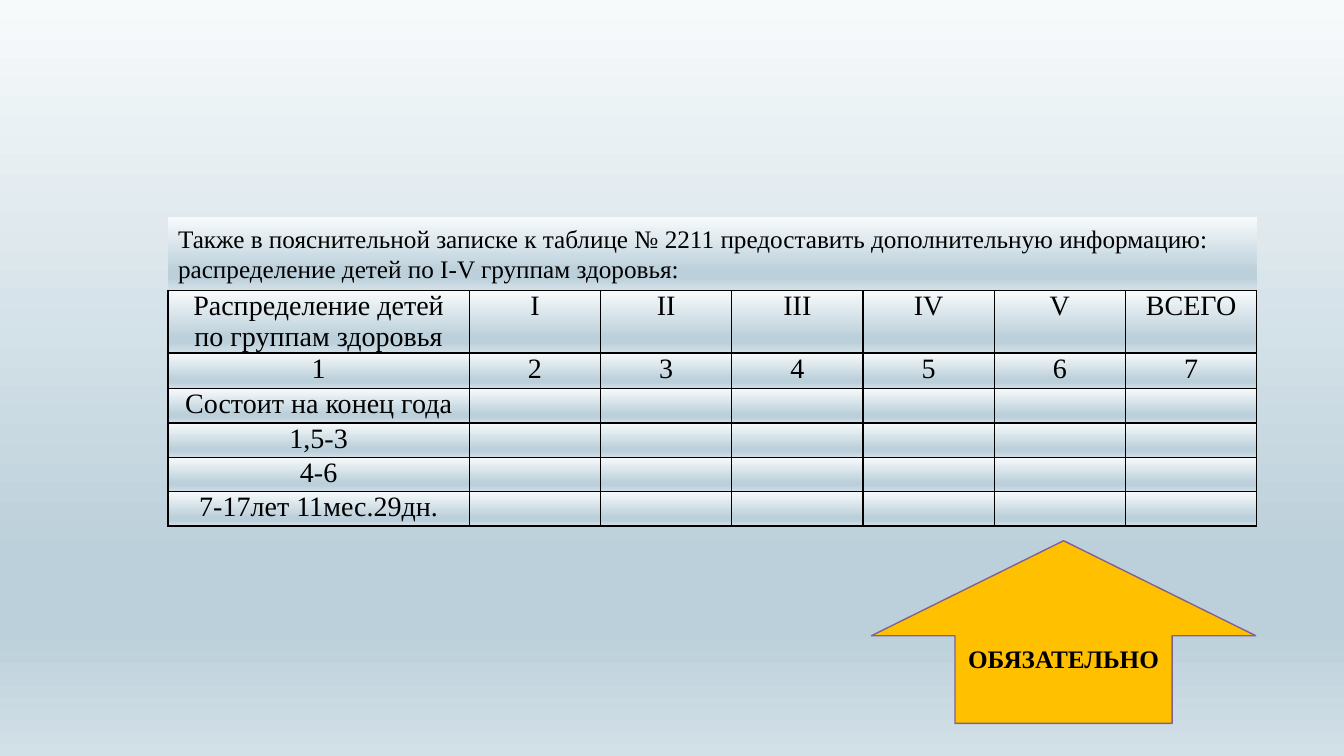
from lxml.etree import SubElement
from pptx import Presentation
from pptx.dml.color import RGBColor
from pptx.enum.shapes import MSO_SHAPE
from pptx.enum.text import MSO_ANCHOR, MSO_AUTO_SIZE, PP_ALIGN
from pptx.oxml.ns import qn
from pptx.util import Pt

PX = 9525
FONT = "Times New Roman"
STOPS = [(0, "F7FAFB"), (74, "BCD0DB"), (83, "BCD0DB"), (100, "D2E0E7")]
LEFT, WIDTH = 160, 1037
GROUPS = ["I", "II", "III", "IV", "V", "ВСЕГО"]
AGES = ["Состоит на конец года", "1,5-3", "4-6", "7-17лет 11мес.29дн."]
ROWS = [
    ["Распределение детей по группам здоровья", *GROUPS],
    [str(n) for n in range(1, 8)],
    *[[age] + [""] * len(GROUPS) for age in AGES],
]
COL_WIDTHS = [287] + [125] * len(GROUPS)
ROW_HEIGHTS = [59, 34] + [29] * len(AGES)
NOTE = ("Также в пояснительной записке к таблице № 2211 предоставить дополнительную "
        "информацию: распределение детей по I-V группам здоровья:")


def px(*values):
    return [v * PX for v in values]


def color(value):
    return RGBColor.from_string(value)


def set_attrs(obj, attrs):
    for name, value in attrs.items():
        setattr(obj, name, value)


def set_gradient(fill, element):
    fill.gradient()
    fill.gradient_angle = 270
    gs_lst = element.find(".//" + qn("a:gsLst"))
    for gs in list(gs_lst):
        gs_lst.remove(gs)
    for pos, value in STOPS:
        gs = SubElement(gs_lst, qn("a:gs"), pos=str(pos * 1000))
        SubElement(gs, qn("a:srgbClr"), val=value)


def write_text(tf, text, align, size, bold=False):
    p = tf.paragraphs[0]
    set_attrs(p, {"alignment": align, "space_before": Pt(0), "line_spacing": 1.0})
    if not text:
        SubElement(p._p, qn("a:endParaRPr"), sz=str(size * 100))
        return
    r = p.add_run()
    r.text = text
    set_attrs(r.font, {"name": FONT, "size": Pt(size), "bold": bold})
    r.font.color.rgb = color("000000")


def add_borders(cell):
    tc_pr = cell._tc.get_or_add_tcPr()
    for side in ("lnL", "lnR", "lnT", "lnB"):
        ln = SubElement(tc_pr, qn("a:" + side), w=str(Pt(1)))
        fill = SubElement(ln, qn("a:solidFill"))
        SubElement(fill, qn("a:srgbClr"), val="000000")


def add_health_table(s):
    frame = s.shapes.add_table(len(ROWS), len(COL_WIDTHS),
                               *px(LEFT, 277, WIDTH, sum(ROW_HEIGHTS)))
    table = frame.table
    set_attrs(table, {"first_row": False, "horz_banding": False})
    for col, width in zip(table.columns, COL_WIDTHS):
        col.width = width * PX
    for row, height, texts in zip(table.rows, ROW_HEIGHTS, ROWS):
        row.height = height * PX
        for cell, text in zip(row.cells, texts):
            set_attrs(cell, {"margin_left": 7 * PX, "margin_right": 7 * PX,
                             "margin_top": 0, "margin_bottom": 0})
            add_borders(cell)
            set_gradient(cell.fill, cell._tc)
            write_text(cell.text_frame, text, PP_ALIGN.CENTER, 20)


def fill_note(sp):
    left, top, width, height = px(LEFT, 207, WIDTH, 69)
    set_attrs(sp, {"left": left, "top": top, "width": width, "height": height})
    set_gradient(sp.fill, sp._element)
    set_attrs(sp.text_frame, {"word_wrap": True, "auto_size": MSO_AUTO_SIZE.NONE,
                              "vertical_anchor": MSO_ANCHOR.MIDDLE})
    write_text(sp.text_frame, NOTE, PP_ALIGN.LEFT, 18)


def add_arrow(s):
    sp = s.shapes.add_shape(MSO_SHAPE.UP_ARROW, *px(830, 515, 366, 174))
    sp.adjustments[0], sp.adjustments[1] = 0.565, 0.52
    sp.shadow.inherit = False
    sp.fill.solid()
    sp.fill.fore_color.rgb = color("FFC000")
    sp.line.color.rgb = color("806292")
    sp.line.width = Pt(1)
    sp.text_frame.vertical_anchor = MSO_ANCHOR.MIDDLE
    write_text(sp.text_frame, "ОБЯЗАТЕЛЬНО", PP_ALIGN.CENTER, 18, bold=True)


def main():
    prs = Presentation()
    prs.slide_width, prs.slide_height = px(1280, 720)
    s = prs.slides.add_slide(prs.slide_layouts[0])
    set_gradient(s.background.fill, s._element)
    title = s.shapes.title._element
    title.getparent().remove(title)
    add_health_table(s)
    fill_note(s.placeholders[1])
    add_arrow(s)
    prs.save("out.pptx")


if __name__ == "__main__":
    main()
